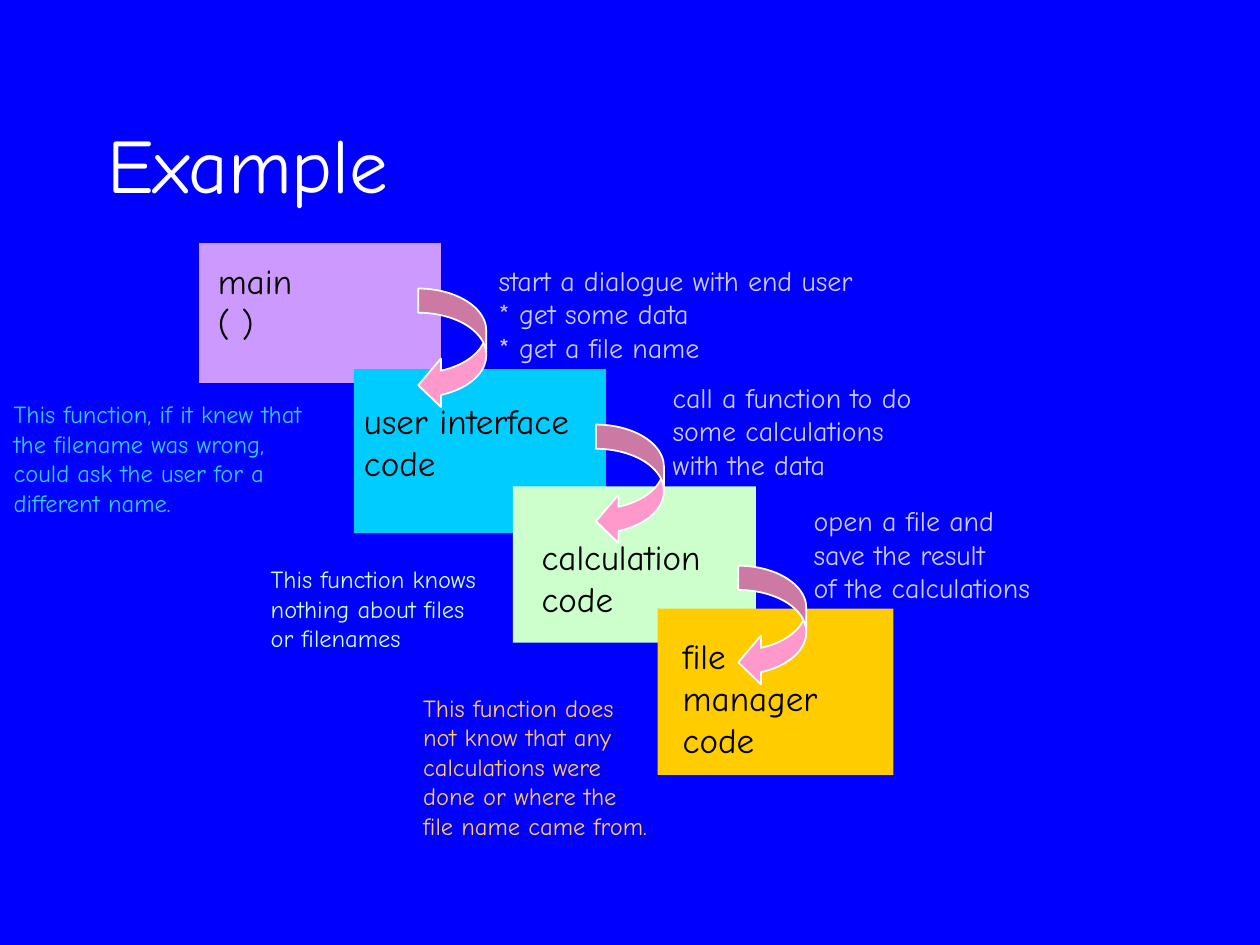
from pptx import Presentation
from pptx.dml.color import RGBColor
from pptx.enum.shapes import MSO_SHAPE
from pptx.enum.text import MSO_ANCHOR, PP_ALIGN
from pptx.util import Inches, Pt

RECTANGLE = MSO_SHAPE.RECTANGLE
CURVED_ARROW = MSO_SHAPE.CURVED_LEFT_ARROW
MIDDLE = MSO_ANCHOR.MIDDLE
LEFT = PP_ALIGN.LEFT

FONT = "Comic Neue"
TITLE_ONLY = 5
COLUMNS, ROWS = 100, 75
CELL = Inches(0.1)
ARROW_SIZE = (5.4, 9.6)
ARROW_BEND = (0.356, 0.712, 0.333)
LABEL_SIZE, CALL_SIZE, NOTE_SIZE = 20, 16, 14

COLORS = {
    "background": "0000FF", "title": "FFFFFF", "label": "000000",
    "call": "CCCCFF", "arrow": "FF99CC", "arrow line": "FFFFFF",
    "main": "CC99FF", "interface": "00CCFF",
    "calculation": "CCFFCC", "file": "FFCC00",
    "interface note": "33CCFF", "calculation note": "CCFFCC",
    "file note": "FFCC66",
}

# Areas are left, top, width, height in grid cells.
# Module: colour, area of the step, area of its label, label
MODULES = [
    ("main", (15.8, 19.3, 19.2, 11.1), (16.3, 20.1, 11.5, 7.7), "main\v( )"),
    ("interface", (28.1, 29.3, 20, 13), (27.9, 31.2, 20.7, 7.7),
     "user interface\ncode"),
    ("calculation", (40.7, 38.6, 19.3, 12.4), (42, 42, 15.7, 7.7),
     "calculation\ncode"),
    ("file", (52.2, 48.3, 18.7, 13.2), (53.2, 49.9, 12.8, 11),
     "file\nmanager\ncode"),
]
# Call: left and top of the arrow, area of the text, text
CALLS = [
    ((33.2, 22.9), (38.6, 20.4, 32.9, 9),
     "start a dialogue with end user\n* get some data\n* get a file name"),
    ((47.3, 33.7), (52.4, 29.7, 22.8, 9),
     "call a function to do\nsome calculations\nwith the data"),
    ((58.6, 44.9), (63.6, 39.5, 21.2, 9),
     "open a file and\nsave the result\nof the calculations"),
]
NOTES = [
    ("file note", (32.6, 54.5, 21.1, 12.8),
     "This function does\nnot know that any\ncalculations were\n"
     "done or where the\nfile name came from."),
    ("calculation note", (20.5, 44.3, 20.2, 8.1),
     "This function knows\nnothing about files\nor filenames"),
    ("interface note", (0.1, 31.2, 28.6, 10.4),
     "This function, if it knew that\nthe filename was wrong,\n"
     "could ask the user for a\ndifferent name."),
]


def color(name):
    return RGBColor.from_string(COLORS[name])


def on_grid(area):
    return [round(cells * CELL) for cells in area]


def write(frame, text, size, color_name):
    frame.text = text
    frame.word_wrap = True
    for para in frame.paragraphs:
        para.alignment = LEFT
        para.font.name = FONT
        para.font.size = Pt(size)
        para.font.color.rgb = color(color_name)


def add_title(slide, text):
    title = slide.shapes.title
    title.left, title.top, title.width, title.height = on_grid(
        (7.5, 6.7, 88.4, 12.5))
    write(title.text_frame, text, 44, "title")
    title.text_frame.vertical_anchor = MIDDLE


def add_text(slide, area, text, size, color_name):
    box = slide.shapes.add_textbox(*on_grid(area))
    write(box.text_frame, text, size, color_name)


def add_filled_shape(slide, kind, area, color_name):
    shape = slide.shapes.add_shape(kind, *on_grid(area))
    shape.shadow.inherit = False
    shape.fill.solid()
    shape.fill.fore_color.rgb = color(color_name)
    shape.line.fill.background()
    return shape


def add_arrow(slide, corner):
    arrow = add_filled_shape(slide, CURVED_ARROW, corner + ARROW_SIZE, "arrow")
    arrow.line.color.rgb = color("arrow line")
    arrow.line.width = Pt(1)
    for index, bend in enumerate(ARROW_BEND):
        arrow.adjustments[index] = bend


def main():
    deck = Presentation()
    deck.slide_width, deck.slide_height = COLUMNS * CELL, ROWS * CELL
    slide = deck.slides.add_slide(deck.slide_layouts[TITLE_ONLY])
    slide.background.fill.solid()
    slide.background.fill.fore_color.rgb = color("background")

    add_title(slide, "Example")
    for name, step_area, label_area, label in MODULES:
        add_filled_shape(slide, RECTANGLE, step_area, name)
        add_text(slide, label_area, label, LABEL_SIZE, "label")
    for corner, area, text in CALLS:
        add_arrow(slide, corner)
        add_text(slide, area, text, CALL_SIZE, "call")
    for name, area, text in NOTES:
        add_text(slide, area, text, NOTE_SIZE, name)
    deck.save("out.pptx")


if __name__ == "__main__":
    main()
